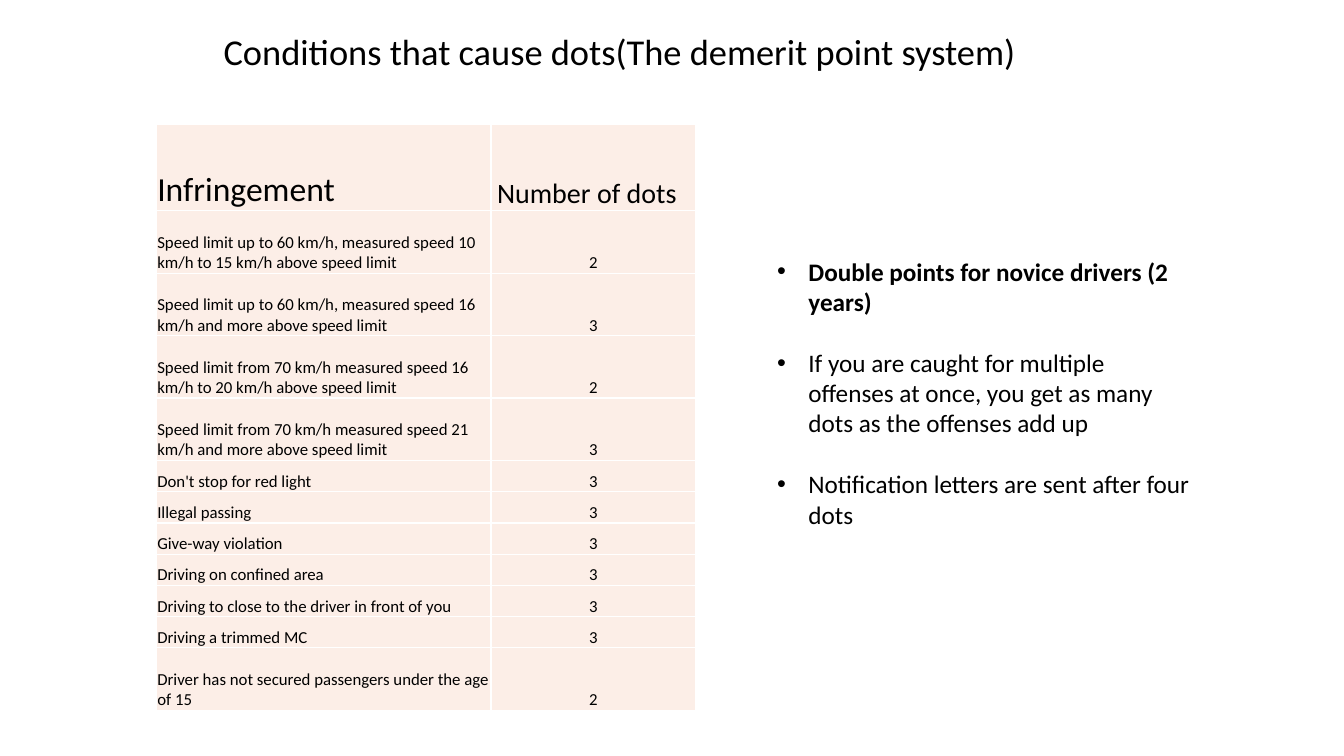
from pptx import Presentation
from pptx.dml.color import RGBColor
from pptx.enum.text import MSO_ANCHOR, PP_ALIGN
from pptx.oxml.ns import qn
from pptx.util import Inches, Pt
from lxml.etree import SubElement

FONT = "Calibri"
BLACK = "000000"
WHITE = "FFFFFF"
PEACH = "FCEEE7"

HEADINGS = ("Infringement", "Number of dots")
INFRINGEMENTS = [
    ("Speed limit up to 60 km/h, measured speed 10 km/h to 15 km/h above speed limit", 2),
    ("Speed limit up to 60 km/h, measured speed 16 km/h and more above speed limit", 3),
    ("Speed limit from 70 km/h measured speed 16 km/h to 20 km/h above speed limit", 2),
    ("Speed limit from 70 km/h measured speed 21 km/h and more above speed limit", 3),
    ("Don't stop for red light", 3),
    ("Illegal passing", 3),
    ("Give-way violation", 3),
    ("Driving on confined area", 3),
    ("Driving to close to the driver in front of you", 3),
    ("Driving a trimmed MC", 3),
    ("Driver has not secured passengers under the age of 15", 2),
]
COLUMN_WIDTHS = (3.32, 2.03)
HEADER_HEIGHT = 0.86
LINE_HEIGHT = 0.31
ONE_LINE_LIMIT = 50

NOTES = [
    "Double points for novice drivers (2 years)",
    "If you are caught for multiple offenses at once, you get as many dots as the offenses add up",
    "Notification letters are sent after four dots",
]


def color(hex_string):
    return RGBColor.from_string(hex_string)


def format_font(paragraph, size, bold=False):
    for run in paragraph.runs:
        run.font.name = FONT
        run.font.size = Pt(size)
        run.font.bold = bold
        run.font.color.rgb = color(BLACK)


def set_margins(target, left, top, right, bottom):
    target.margin_left, target.margin_top = Inches(left), Inches(top)
    target.margin_right, target.margin_bottom = Inches(right), Inches(bottom)


def add_borders(cell, hex_string, width):
    properties = cell._tc.get_or_add_tcPr()
    for side in ("a:lnL", "a:lnR", "a:lnT", "a:lnB"):
        line = SubElement(properties, qn(side), w=str(Pt(width)))
        fill = SubElement(line, qn("a:solidFill"))
        SubElement(fill, qn("a:srgbClr"), val=hex_string)


def fill_cell(cell, text, size, alignment=PP_ALIGN.LEFT, left_margin=0.01):
    add_borders(cell, WHITE, 1)
    cell.fill.solid()
    cell.fill.fore_color.rgb = color(PEACH)
    cell.vertical_anchor = MSO_ANCHOR.BOTTOM
    set_margins(cell, left_margin, 0.01, 0.01, 0)
    cell.text_frame.text = text
    paragraph = cell.text_frame.paragraphs[0]
    paragraph.alignment = alignment
    format_font(paragraph, size)


def set_title(slide, text):
    title = slide.shapes.title
    title.left, title.top = Inches(0.36), Inches(0.29)
    title.width, title.height = Inches(11.58), Inches(0.51)
    frame = title.text_frame
    set_margins(frame, 0, 0, 0, 0)
    frame.vertical_anchor = MSO_ANCHOR.TOP
    frame.text = text
    frame.paragraphs[0].alignment = PP_ALIGN.CENTER
    format_font(frame.paragraphs[0], 26)


def add_infringement_table(slide):
    heights = [HEADER_HEIGHT] + [
        LINE_HEIGHT * (2 if len(text) > ONE_LINE_LIMIT else 1) for text, _ in INFRINGEMENTS
    ]
    table = slide.shapes.add_table(
        len(heights), len(COLUMN_WIDTHS), Inches(1.55), Inches(1.23),
        Inches(sum(COLUMN_WIDTHS)), Inches(sum(heights)),
    ).table
    table.first_row = False
    table.horz_banding = False
    for column, width in zip(table.columns, COLUMN_WIDTHS):
        column.width = Inches(width)
    for row, height in zip(table.rows, heights):
        row.height = Inches(height)
    fill_cell(table.cell(0, 0), HEADINGS[0], 24)
    fill_cell(table.cell(0, 1), HEADINGS[1], 20, left_margin=0.06)
    for index, (infringement, dots) in enumerate(INFRINGEMENTS, start=1):
        fill_cell(table.cell(index, 0), infringement, 12)
        fill_cell(table.cell(index, 1), str(dots), 12, PP_ALIGN.CENTER)


def add_bullet(paragraph, indent):
    properties = paragraph._p.get_or_add_pPr()
    properties.set("marL", str(Inches(indent)))
    properties.set("indent", str(-Inches(indent)))
    SubElement(properties, qn("a:buFont"), typeface="Arial")
    SubElement(properties, qn("a:buChar"), char="•")


def add_notes(slide):
    box = slide.shapes.add_textbox(Inches(7.61), Inches(2.49), Inches(4.33), Inches(2.83))
    frame = box.text_frame
    frame.word_wrap = True
    frame.text = "\n".join(NOTES)
    for index, paragraph in enumerate(frame.paragraphs):
        add_bullet(paragraph, 0.31)
        if index:
            paragraph.space_before = Pt(22)
        format_font(paragraph, 18, bold=index == 0)


def main():
    presentation = Presentation()
    presentation.slide_width = Inches(13.33)
    presentation.slide_height = Inches(7.5)
    slide = presentation.slides.add_slide(presentation.slide_layouts[5])
    set_title(slide, "Conditions that cause dots(The demerit point system)")
    add_infringement_table(slide)
    add_notes(slide)
    presentation.save("out.pptx")


if __name__ == "__main__":
    main()
